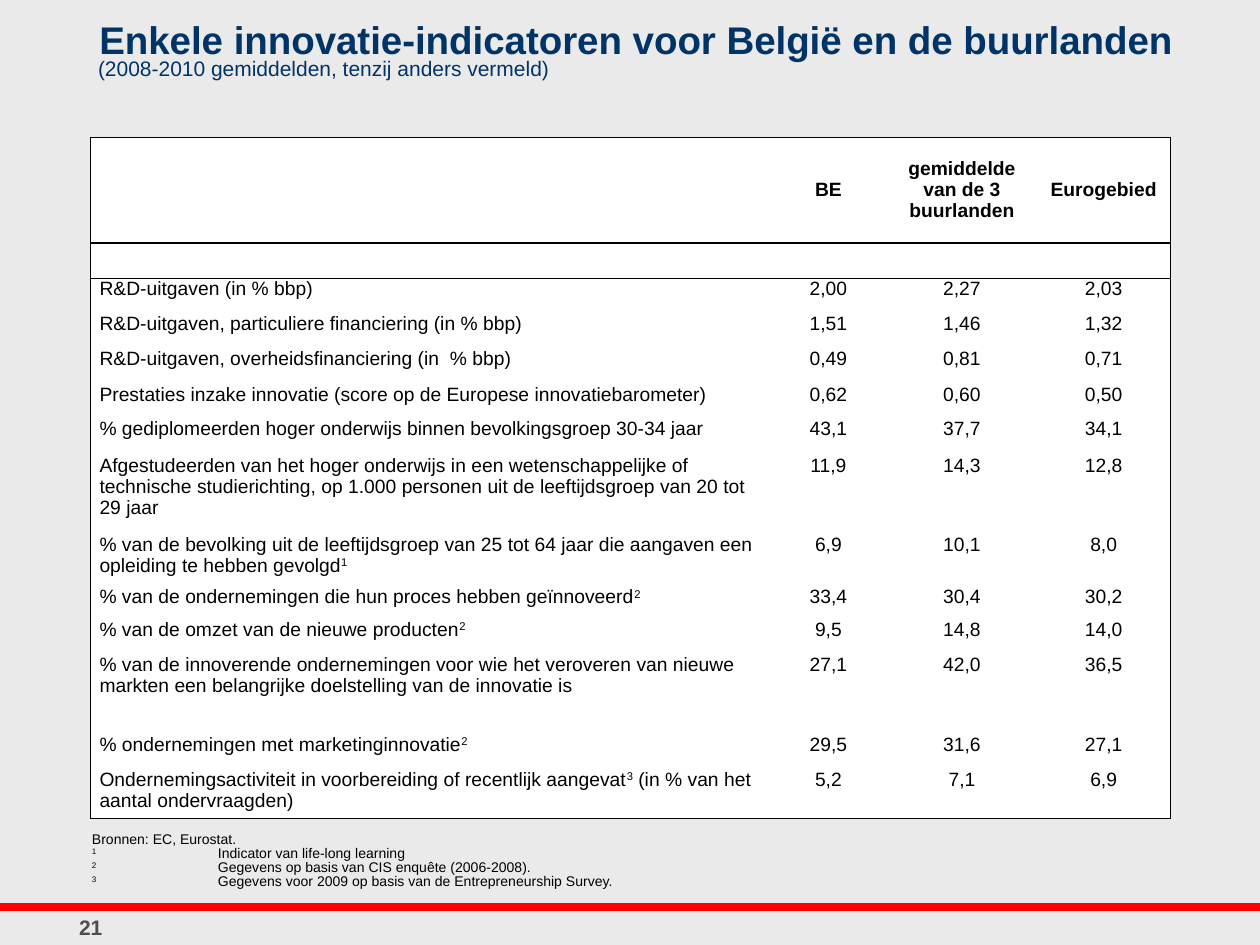
"""Build a slide with a table of innovation indicators for Belgium and its neighbours."""
from lxml.etree import SubElement
from pptx import Presentation
from pptx.dml.color import RGBColor
from pptx.enum.shapes import MSO_CONNECTOR
from pptx.enum.text import MSO_ANCHOR, PP_ALIGN
from pptx.oxml import parse_xml
from pptx.oxml.ns import nsdecls, qn
from pptx.util import Inches, Pt

WIDTH, HEIGHT = 10, 7.5
NAVY, BLACK, GREY, RED = "003366", "000000", "4D4D4D", "FF0000"
PLAIN_TABLE_STYLE = "{2D5ABB26-0587-4C30-8999-92F81FD0307C}"

TITLE = "Enkele innovatie-indicatoren voor België en de buurlanden"
SUBTITLE = "(2008-2010 gemiddelden, tenzij anders vermeld)"
PAGE_NUMBER = "21"
COLUMN_WIDTHS = [5.39, 0.93, 1.19, 1.06]
# Text between two carets is superscript.
INDICATORS = [
    (0.84, "", "BE", "gemiddelde van de 3 buurlanden", "Eurogebied"),
    (0.28, "", "", "", ""),
    (0.28, "R&D-uitgaven (in % bbp)", "2,00", "2,27", "2,03"),
    (0.28, "R&D-uitgaven, particuliere financiering (in % bbp)", "1,51", "1,46", "1,32"),
    (0.28, "R&D-uitgaven, overheidsfinanciering (in  % bbp)", "0,49", "0,81", "0,71"),
    (0.27, "Prestaties inzake innovatie (score op de Europese innovatiebarometer)",
     "0,62", "0,60", "0,50"),
    (0.3, "% gediplomeerden hoger onderwijs binnen bevolkingsgroep 30-34 jaar",
     "43,1", "37,7", "34,1"),
    (0.62, "Afgestudeerden van het hoger onderwijs in een wetenschappelijke of technische "
     "studierichting, op 1.000 personen uit de leeftijdsgroep van 20 tot 29 jaar",
     "11,9", "14,3", "12,8"),
    (0.42, "% van de bevolking uit de leeftijdsgroep van 25 tot 64 jaar die aangaven een "
     "opleiding te hebben gevolgd^1^", "6,9", "10,1", "8,0"),
    (0.26, "% van de ondernemingen die hun proces hebben geïnnoveerd^2^", "33,4", "30,4", "30,2"),
    (0.28, "% van de omzet van de nieuwe producten^2^", "9,5", "14,8", "14,0"),
    (0.63, "% van de innoverende ondernemingen voor wie het veroveren van nieuwe markten "
     "een belangrijke doelstelling van de innovatie is", "27,1", "42,0", "36,5"),
    (0.28, "% ondernemingen met marketinginnovatie^2^", "29,5", "31,6", "27,1"),
    (0.39, "Ondernemingsactiviteit in voorbereiding of recentlijk aangevat^3^ "
     "(in % van het aantal ondervraagden)", "5,2", "7,1", "6,9"),
]
FOOTNOTES = [
    "Bronnen: EC, Eurostat.",
    "^1^\tIndicator van life-long learning",
    "^2^\tGegevens op basis van CIS enquête (2006-2008).",
    "^3^\tGegevens voor 2009 op basis van de Entrepreneurship Survey.",
]


def rgb(color):
    return RGBColor.from_string(color)


def write(paragraph, text, size, color=BLACK, bold=False, align=PP_ALIGN.LEFT, spacing=None,
          tab=None):
    paragraph.alignment = align
    paragraph.line_spacing = spacing
    if tab:
        stops = SubElement(paragraph._p.get_or_add_pPr(), qn("a:tabLst"))
        SubElement(stops, qn("a:tab"), pos=str(Inches(tab)), algn="l")
    paragraph.font.size = Pt(size)
    for index, part in enumerate(text.split("^")):
        if part:
            span = paragraph.add_run()
            span.text = part
            span.font.name, span.font.size, span.font.bold = "Arial", Pt(size), bold
            span.font.color.rgb = rgb(color)
            if index % 2:
                span._r.get_or_add_rPr().set("baseline", "30000")
    if not text:
        SubElement(paragraph._p, qn("a:endParaRPr"), sz=str(size * 100))


def add_text(page, text, left, top, width, height, anchor=MSO_ANCHOR.TOP, **style):
    box = page.shapes.add_textbox(*map(Inches, (left, top, width, height)))
    box.text_frame.word_wrap = True
    box.text_frame.vertical_anchor = anchor
    write(box.text_frame.paragraphs[0], text, **style)


def add_plain_table(page, left, top, widths, heights):
    frame = page.shapes.add_table(len(heights), len(widths), Inches(left), Inches(top),
                                  Inches(sum(widths)), Inches(sum(heights)))
    table = frame.table
    table.first_row = table.horz_banding = False
    next(frame._element.iter(qn("a:tableStyleId"))).text = PLAIN_TABLE_STYLE
    for column, width in zip(table.columns, widths):
        column.width = Inches(width)
    for row, height in zip(table.rows, heights):
        row.height = Inches(height)
    return table


def set_margins(cell, left, top, right, bottom):
    cell.margin_left, cell.margin_top = Inches(left), Inches(top)
    cell.margin_right, cell.margin_bottom = Inches(right), Inches(bottom)


def set_borders(cell, sides):
    for index, side in enumerate(sides):
        line = parse_xml(f'<a:ln{side} {nsdecls("a")} w="12700"><a:solidFill>'
                         f'<a:srgbClr val="{BLACK}"/></a:solidFill></a:ln{side}>')
        cell._tc.get_or_add_tcPr().insert(index, line)


def add_indicators(page):
    heights = [row[0] for row in INDICATORS]
    table = add_plain_table(page, 0.72, 1.09, COLUMN_WIDTHS, heights)
    last_row, last_column = len(heights) - 1, len(COLUMN_WIDTHS) - 1
    for r, (_, *texts) in enumerate(INDICATORS):
        for c, text in enumerate(texts):
            cell = table.cell(r, c)
            set_margins(cell, 0.07, 0, 0.07, 0)
            cell.vertical_anchor = MSO_ANCHOR.TOP if r else MSO_ANCHOR.MIDDLE
            cell.fill.solid()
            cell.fill.fore_color.rgb = rgb("FFFFFF")
            edges = {"L": c == 0, "R": c == last_column, "T": r < 2, "B": r in (0, last_row)}
            set_borders(cell, [side for side, shown in edges.items() if shown])
            write(cell.text_frame.paragraphs[0], text, 11, bold=r == 0, spacing=Pt(12),
                  align=PP_ALIGN.CENTER if c else PP_ALIGN.LEFT)


def add_footnotes(page):
    cell = add_plain_table(page, 0.71, 6.6, [7.94], [0.4]).cell(0, 0)
    set_margins(cell, 0.02, 0.01, 0, 0.01)
    cell.fill.background()
    frame = cell.text_frame
    for index, note in enumerate(FOOTNOTES):
        paragraph = frame.add_paragraph() if index else frame.paragraphs[0]
        write(paragraph, note, 8, spacing=0.9, tab=1)


def add_footer(page):
    rule = page.shapes.add_connector(MSO_CONNECTOR.STRAIGHT, 0, Inches(7.2),
                                     Inches(WIDTH), Inches(7.2))
    rule.line.color.rgb = rgb(RED)
    rule.line.width = Pt(4.5)
    SubElement(rule._element.spPr, qn("a:effectLst"))
    add_text(page, PAGE_NUMBER, 0.28, 7.21, 0.88, 0.29, anchor=MSO_ANCHOR.MIDDLE,
             size=12, color=GREY, bold=True, align=PP_ALIGN.CENTER)


def main():
    deck = Presentation()
    deck.slide_width, deck.slide_height = Inches(WIDTH), Inches(HEIGHT)
    page = deck.slides.add_slide(deck.slide_layouts[6])
    page.background.fill.solid()
    page.background.fill.fore_color.rgb = rgb("EAEAEA")
    add_footer(page)
    add_text(page, TITLE, 0.69, 0.08, 8.84, 0.41, size=22, color=NAVY, bold=True)
    add_footnotes(page)
    add_indicators(page)
    add_text(page, SUBTITLE, 0.68, 0.39, 8.84, 0.41, size=12, color=NAVY)
    deck.save("out.pptx")


if __name__ == "__main__":
    main()
